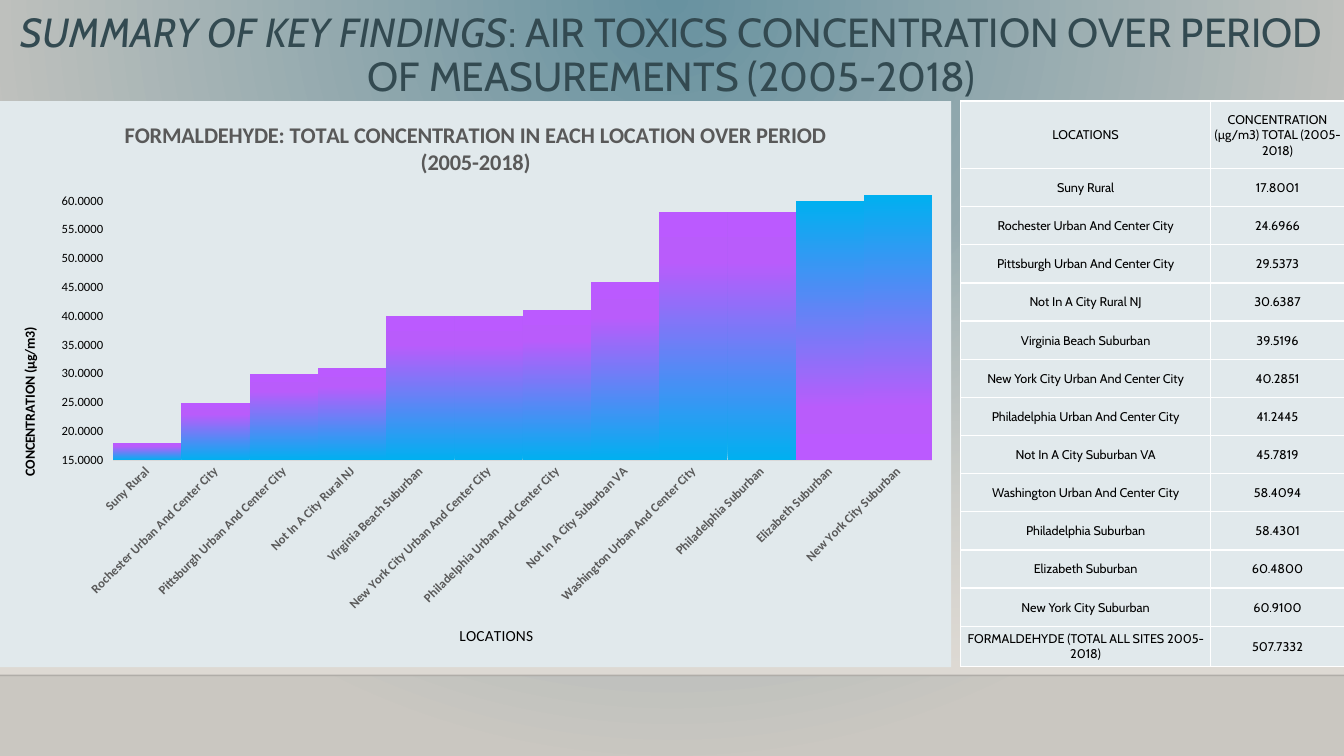
import pptx
import pptx.chart.data
import pptx.dml.color
import pptx.enum.chart
import pptx.enum.shapes
import pptx.enum.text
import pptx.oxml
import pptx.oxml.ns
import pptx.util

Pt = pptx.util.Pt
RGB = pptx.dml.color.RGBColor
MID = pptx.enum.text.MSO_ANCHOR.MIDDLE
CENTER = pptx.enum.text.PP_ALIGN.CENTER
TICK = pptx.enum.chart.XL_TICK_MARK

LEAD = "SUMMARY OF KEY FINDINGS"
REST = ": AIR TOXICS CONCENTRATION OVER PERIOD OF MEASUREMENTS (2005-2018)"
TITLE = "FORMALDEHYDE: TOTAL CONCENTRATION IN EACH LOCATION OVER PERIOD (2005-2018)"
SITES = [
    ("Suny Rural", 17.8001),
    ("Rochester Urban And Center City", 24.6966),
    ("Pittsburgh Urban And Center City", 29.5373),
    ("Not In A City Rural NJ", 30.6387),
    ("Virginia Beach Suburban", 39.5196),
    ("New York City Urban And Center City", 40.2851),
    ("Philadelphia Urban And Center City", 41.2445),
    ("Not In A City Suburban VA", 45.7819),
    ("Washington Urban And Center City", 58.4094),
    ("Philadelphia Suburban", 58.4301),
    ("Elizabeth Suburban", 60.48),
    ("New York City Suburban", 60.91),
]
HEAD = ("LOCATIONS", "CONCENTRATION (µg/m3) TOTAL (2005-2018)")
TOTAL = ("FORMALDEHYDE (TOTAL ALL SITES 2005-2018)", "507.7332")
ROWS = [HEAD] + [(name, f"{val:.4f}") for name, val in SITES] + [TOTAL]

BLACK, WHITE = RGB(0, 0, 0), RGB(255, 255, 255)
SLATE, GRAY = RGB(0x33, 0x4A, 0x51), RGB(0x59, 0x59, 0x59)
PALE, RULE = RGB(0xE1, 0xE9, 0xEC), RGB(0xD9, 0xD9, 0xD9)
BLUE, PLUM, PINK = RGB(0, 0xB0, 0xF0), RGB(0xB9, 0x5C, 0xFB), RGB(0xBB, 0x5A, 0xFF)
TEAL, STONE, SAND = RGB(0x68, 0x92, 0xA0), RGB(0xCA, 0xC7, 0xC1), RGB(0xDF, 0xDB, 0xD5)
BARS = [(0, BLUE, 100), (80, PLUM, 100), (100, PINK, 100)]

WIDE, HIGH = 960, 540
TOP, DEEP, FLOOR = 72.2, 404.4, 482.4
CHART_W, TABLE_X = 679.4, 686.2
COLS = [178.4, 95.8]
TALLS = [48.2] + [27.25] * len(SITES) + [28.8]


def xml(text):
    """Parse markup that uses the a: and c: prefixes."""
    tag, rest = text.split(">", 1)
    end = "/" if tag.endswith("/") else ""
    spaces = pptx.oxml.ns.nsdecls("a", "c")
    return pptx.oxml.parse_xml(f"{tag.rstrip('/')} {spaces}{end}>{rest}")


def put(obj, **vals):
    for key, val in vals.items():
        setattr(obj, key, val)


def style(font, size, color, face, **more):
    put(font, size=Pt(size), name=face, **more)
    font.color.rgb = color


def blend(fill, root, stops, angle=None):
    """Give fill, found under root, a linear or (without angle) round gradient."""
    fill.solid()
    old = root.xpath(".//a:solidFill[not(*)]")[0]
    marks = "".join(
        f'<a:gs pos="{pos * 1000}"><a:srgbClr val="{color}">'
        f'<a:alpha val="{alpha * 1000}"/></a:srgbClr></a:gs>'
        for pos, color, alpha in stops)
    if angle is None:
        way = ('<a:path path="circle"><a:fillToRect l="43000" t="0" '
               'r="43000" b="100000"/></a:path>')
    else:
        way = f'<a:lin ang="{angle * 60000}" scaled="0"/>'
    new = xml(f'<a:gradFill rotWithShape="1"><a:gsLst>{marks}</a:gsLst>{way}</a:gradFill>')
    old.getparent().replace(old, new)


def place(node, spot, x, y, size=None):
    """Pin a chart part at points from the corner of the chart."""
    for old in node.xpath("c:layout"):
        node.remove(old)
    inner = '<c:layoutTarget val="inner"/>' if size else ""
    area = ""
    if size:
        area = f'<c:w val="{size[0] / CHART_W}"/><c:h val="{size[1] / DEEP}"/>'
    node.insert(spot, xml(
        f'<c:layout><c:manualLayout>{inner}<c:xMode val="edge"/><c:yMode val="edge"/>'
        f'<c:x val="{x / CHART_W}"/><c:y val="{y / DEEP}"/>{area}'
        '</c:manualLayout></c:layout>'))


def label(owner, text, x, y, size, color, bold, turn=0):
    """Write the title of a chart or an axis."""
    owner.has_title = True
    title = getattr(owner, "chart_title", None) or owner.axis_title
    frame = title.text_frame
    frame.text = text
    style(frame.paragraphs[0].runs[0].font, size, color, "Calibri", bold=bold)
    body = frame._txBody.bodyPr
    body.set("rot", str(turn * 60000))
    body.set("vert", "horz")
    place(title._element, 1, x, y)


def scene(slide):
    """Add the backdrop, its floor line and the heading."""
    blend(slide.background.fill, slide.element, [(0, TEAL, 100), (100, STONE, 100)])
    wall = slide.shapes.add_shape(
        pptx.enum.shapes.MSO_SHAPE.RECTANGLE, 0, Pt(159), Pt(WIDE), Pt(FLOOR - 159))
    wall.shadow.inherit = False
    wall.line.fill.background()
    blend(wall.fill, wall.element, [(0, SAND, 0), (100, SAND, 100)], 90)

    edge = slide.shapes.add_connector(
        pptx.enum.shapes.MSO_CONNECTOR.STRAIGHT, 0, Pt(FLOOR), Pt(WIDE), Pt(FLOOR))
    edge.line.width = Pt(1)
    edge.line.color.rgb = BLACK
    edge.element.xpath(".//a:ln//a:srgbClr")[0].append(xml('<a:alpha val="20000"/>'))
    edge.element.spPr.append(xml("<a:effectLst/>"))

    frame = slide.shapes.add_textbox(0, Pt(8.6), Pt(WIDE), Pt(63.4)).text_frame
    put(frame, word_wrap=True, vertical_anchor=MID)
    para = frame.paragraphs[0]
    put(para, alignment=CENTER, line_spacing=0.9)
    for text, slant in ((LEAD, True), (REST, False)):
        run = para.add_run()
        run.text = text
        style(run.font, 29, SLATE, "Cabin", italic=slant)


def grid(slide):
    """Add the table of sites."""
    table = slide.shapes.add_table(
        len(ROWS), len(COLS), Pt(TABLE_X), Pt(TOP), Pt(sum(COLS)), Pt(DEEP)).table
    put(table, first_row=False, horz_banding=False)
    for col, width in zip(table.columns, COLS):
        col.width = Pt(width)
    for row, tall, texts in zip(table.rows, TALLS, ROWS):
        row.height = Pt(tall)
        for cell, text in zip(row.cells, texts):
            cell.text = text
            put(cell, vertical_anchor=MID, margin_left=Pt(0.7), margin_right=Pt(0.7),
                margin_top=Pt(0.7), margin_bottom=0)
            cell.fill.solid()
            cell.fill.fore_color.rgb = PALE
            para = cell.text_frame.paragraphs[0]
            para.alignment = CENTER
            style(para.runs[0].font, 9, BLACK, "Cabin")
            for spot, side in enumerate("LRTB"):
                cell._tc.tcPr.insert(spot, xml(
                    f'<a:ln{side} w="12700"><a:solidFill><a:srgbClr val="{WHITE}"/>'
                    f'</a:solidFill></a:ln{side}>'))


def graph(slide):
    """Add the column chart of sites."""
    data = pptx.chart.data.CategoryChartData(number_format="0.0000")
    data.categories = [name for name, _ in SITES]
    data.add_series("Series 1", [round(val) for _, val in SITES])
    chart = slide.shapes.add_chart(
        pptx.enum.chart.XL_CHART_TYPE.COLUMN_CLUSTERED,
        0, Pt(TOP), Pt(CHART_W), Pt(DEEP), data).chart
    root = chart.element
    chart.has_legend = False
    style(chart.font, 10, BLACK, "Calibri")
    root.xpath("c:chart")[0].addnext(xml(
        f'<c:spPr><a:solidFill><a:srgbClr val="{PALE}"/></a:solidFill>'
        '<a:ln><a:noFill/></a:ln></c:spPr>'))
    place(root.xpath(".//c:plotArea")[0], 0, 80.8, 67.2, (585.2, 189.4))

    plot = chart.plots[0]
    put(plot, gap_width=0, vary_by_categories=False)
    bars = plot.series[0]
    blend(bars.format.fill, root, BARS, 270)
    for spot in (10, 11):
        blend(bars.points[spot].format.fill, root, BARS, 90)

    base, side = chart.category_axis, chart.value_axis
    put(base, major_tick_mark=TICK.NONE, has_major_gridlines=False)
    put(side, major_tick_mark=TICK.OUTSIDE, has_major_gridlines=False,
        minimum_scale=15, maximum_scale=61, major_unit=5)
    put(side.tick_labels, number_format="0.0000", number_format_is_linked=False)
    style(base.tick_labels.font, 9, GRAY, "Calibri", bold=True)
    style(side.tick_labels.font, 9, BLACK, "Calibri")
    base._element.xpath("c:txPr/a:bodyPr")[0].set("rot", str(-45 * 60000))
    base.format.line.width = Pt(1)
    base.format.line.color.rgb = RULE
    side.format.line.fill.background()
    label(chart, TITLE, 86.2, 10.4, 16, GRAY, True)
    label(base, "LOCATIONS", 326.2, 372.6, 11, BLACK, False)
    label(side, "CONCENTRATION (µg/m3)", 12.8, 159.6, 10, BLACK, True, -90)


def main():
    deck = pptx.Presentation()
    put(deck, slide_width=Pt(WIDE), slide_height=Pt(HIGH))
    slide = deck.slides.add_slide(deck.slide_layouts[6])
    scene(slide)
    grid(slide)
    graph(slide)
    deck.save("out.pptx")


if __name__ == "__main__":
    main()
